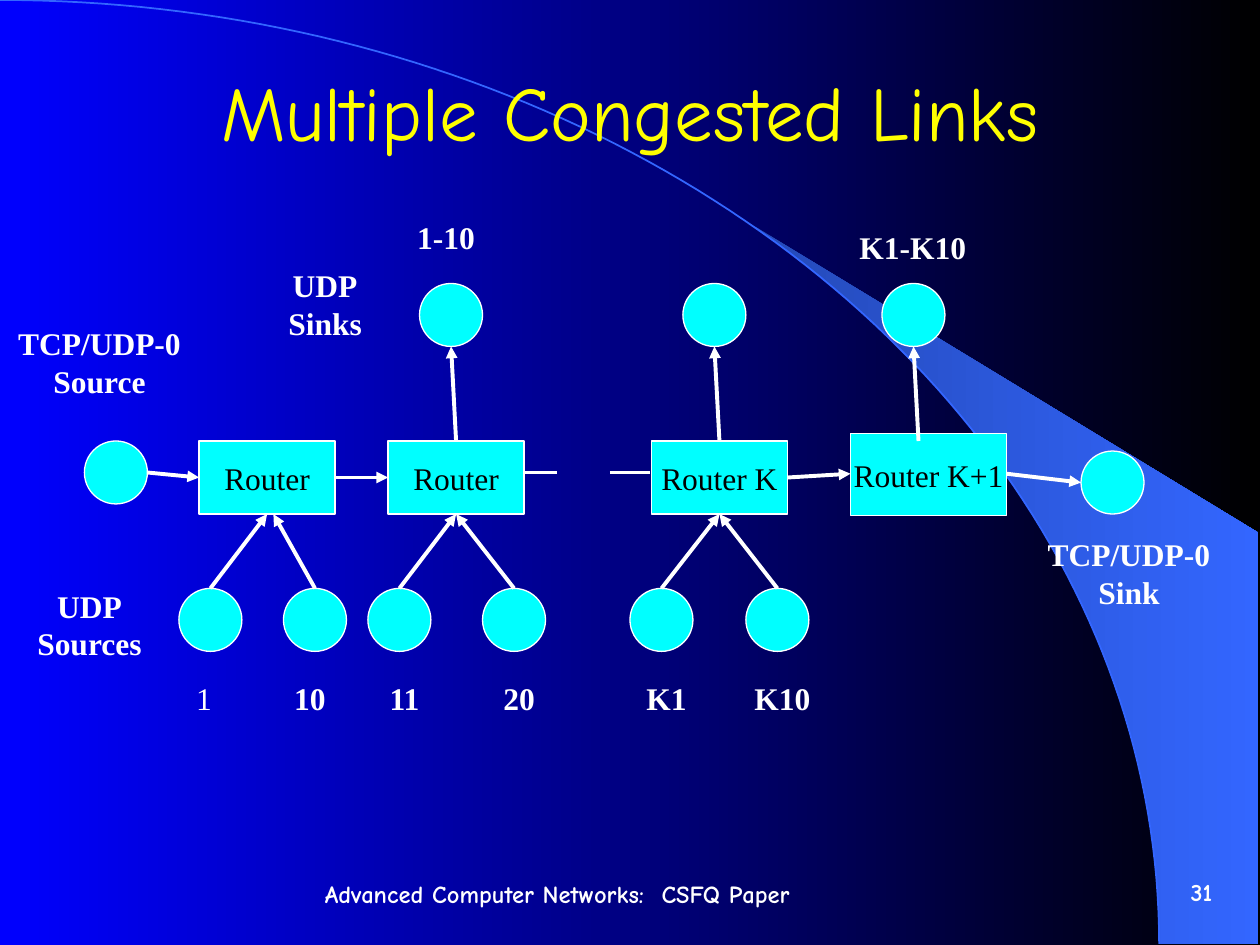
import math
import pptx
import pptx.util
import pptx.dml.color
import pptx.enum.shapes
import pptx.enum.text
import pptx.oxml
import pptx.oxml.ns

Inches = pptx.util.Inches
SHAPE = pptx.enum.shapes.MSO_SHAPE
ALIGN = pptx.enum.text.PP_ALIGN

# Content
TITLE = "Multiple Congested Links"
FOOTER = ("Advanced Computer Networks:  CSFQ Paper", (2.48, 6.9, 4.88, 0.39))
NUMBER = ("31", (8.23, 6.82, 1.49, 0.51))
ROUTERS = [  # name, box
    ("Router", (1.58, 3.5, 1.08, 0.58)),
    ("Router", (3.08, 3.5, 1.08, 0.58)),
    ("Router K", (5.17, 3.5, 1.08, 0.58)),
    ("Router K+1", (6.75, 3.44, 1.24, 0.65)),
]
SOURCES = [  # label, label left, bold, node left, x where its arrow ends
    ("1", 1.33, False, 1.42, 2.12), ("10", 2.17, True, 2.25, 2.17),
    ("11", 2.92, True, 2.92, 3.62), ("20", 3.83, True, 3.83, 3.62),
    ("K1", 5, True, 5, 5.71), ("K10", 5.92, True, 5.92, 5.71),
]
SINKS = [3.33, 5.42, 7]
ENDPOINTS = [(0.67, 3.5), (8.58, 3.58)]
LINKS = [  # from, to, arrowhead
    ((1.17, 3.75), (1.58, 3.79), True),
    ((2.67, 3.79), (3.08, 3.79), True),
    ((4.17, 3.75), (4.42, 3.75), False),
    ((4.84, 3.75), (5.16, 3.75), False),
    ((6.25, 3.79), (6.75, 3.76), True),
    ((7.99, 3.76), (8.58, 3.83), True),
]
CAPTIONS = [  # lines, box
    ("UDP\nSinks", (2.08, 2.08, 1, 0.67)),
    ("TCP/UDP-0\nSink", (8.42, 4.17, 1.08, 0.75)),
    ("TCP/UDP-0\nSource", (0.25, 2.5, 1.08, 0.75)),
    ("UDP\nSources", (0.17, 4.58, 1.08, 0.75)),
    ("1-10", (3.25, 1.67, 0.58, 0.42)),
    ("K1-K10", (6.83, 1.75, 0.83, 0.42)),
]
NODE = 0.5
SOURCE_TOP, SINK_TOP, LABEL_TOP = 4.67, 2.25, 5.33
ROUTER_TOP, ROUTER_BOTTOM = 3.5, 4.08
ARC_W, ARC_H = 9.2, 7.49

THEME = dict(
    title="FFFF00", text="FFFFFF", node="00FFFF", dark="000000",
    back=("0000FF", "000000"), wedge=("2449B6", "3366FF"), arc="3366FF",
    display="Comic Neue", body="Times New Roman",
    title_pt=44, body_pt=18, foot_pt=14, outline_pt=0.75, link_pt=2.25,
)


def rgb(name):
    return pptx.dml.color.RGBColor.from_string(THEME.get(name, name))


def set_gradient(fill, colors):
    fill.gradient()
    fill.gradient_angle = 0
    for stop, color, position in zip(fill.gradient_stops, colors, (0, 1)):
        stop.color.rgb = rgb(color)
        stop.position = position


def write(sp, text, font="body", size="body_pt", color="text", bold=False,
          align=ALIGN.CENTER, wrap=False):
    tf = sp.text_frame
    tf.word_wrap = wrap
    tf.vertical_anchor = pptx.enum.text.MSO_ANCHOR.MIDDLE
    for i, line in enumerate(text.split("\n")):
        p = tf.add_paragraph() if i else tf.paragraphs[0]
        p.alignment = align
        r = p.add_run()
        r.text = line
        r.font.name = THEME[font]
        r.font.size = pptx.util.Pt(THEME[size])
        r.font.bold = bold
        r.font.color.rgb = rgb(color)


def add_label(s, text, box, **fmt):
    """Text on a clear rectangle, whose lines may run past its sides."""
    sp = s.shapes.add_shape(SHAPE.RECTANGLE, *map(Inches, box))
    sp.shadow.inherit = False
    sp.fill.background()
    sp.line.fill.background()
    write(sp, text, **fmt)


def add_node(s, kind, box):
    sp = s.shapes.add_shape(kind, *map(Inches, box))
    sp.shadow.inherit = False
    sp.fill.solid()
    sp.fill.fore_color.rgb = rgb("node")
    sp.line.color.rgb = rgb("text")
    sp.line.width = pptx.util.Pt(THEME["outline_pt"])
    return sp


def add_circle(s, left, top):
    add_node(s, SHAPE.OVAL, (left, top, NODE, NODE))


def add_link(s, start, end, arrow=True):
    c = s.shapes.add_connector(pptx.enum.shapes.MSO_CONNECTOR.STRAIGHT,
                               *map(Inches, start + end))
    c.line.color.rgb = rgb("text")
    c.line.width = pptx.util.Pt(THEME["link_pt"])
    ns = pptx.oxml.ns.nsdecls("a")
    if arrow:
        c.line._get_or_add_ln().append(
            pptx.oxml.parse_xml(f'<a:tailEnd {ns} type="triangle"/>'))
    c.element.spPr.append(pptx.oxml.parse_xml(f"<a:effectLst {ns}/>"))


def arc_points(first_x, steps):
    """Points on the quarter ellipse from first_x to its right end."""
    first = math.asin(first_x / ARC_W)
    angles = [first + (math.pi / 2 - first) * i / steps for i in range(steps + 1)]
    return [(ARC_W * math.sin(a), ARC_H * (1 - math.cos(a))) for a in angles]


def add_outline(s, points, close):
    points = [(Inches(x), Inches(y)) for x, y in points]
    builder = s.shapes.build_freeform(*points[0])
    builder.add_line_segments(points[1:], close=close)
    sp = builder.convert_to_shape()
    sp.shadow.inherit = False
    return sp


def add_backdrop(s):
    set_gradient(s.background.fill, THEME["back"])
    wedge = add_outline(s, arc_points(5.89, 24) + [(9.99, 7.49), (9.99, 4.23)], True)
    set_gradient(wedge.fill, THEME["wedge"])
    wedge.line.fill.background()
    arc = add_outline(s, arc_points(0, 90), False)
    arc.fill.background()
    arc.line.color.rgb = rgb("arc")
    arc.line.width = pptx.util.Pt(1)


def main():
    prs = pptx.Presentation()
    prs.slide_width, prs.slide_height = Inches(10), Inches(7.5)
    s = prs.slides.add_slide(prs.slide_layouts[5])
    add_backdrop(s)

    # Title in front of the backdrop, then footer and slide number
    title = s.shapes.title
    title.element.getparent().append(title.element)
    title.left, title.top, title.width, title.height = map(Inches, (0.75, 0.25, 8.5, 1.25))
    write(title, TITLE, font="display", size="title_pt", color="title", wrap=True)
    for (text, box), align in ((FOOTER, ALIGN.LEFT), (NUMBER, ALIGN.RIGHT)):
        write(s.shapes.add_textbox(*map(Inches, box)), text, font="display",
              size="foot_pt", bold=True, align=align, wrap=True)

    # Routers and end points
    for name, box in ROUTERS:
        write(add_node(s, SHAPE.RECTANGLE, box), name, color="dark")
    for left, top in ENDPOINTS:
        add_circle(s, left, top)

    # Sources below and sinks above, each joined to its router
    for label, label_left, bold, left, target in SOURCES:
        add_circle(s, left, SOURCE_TOP)
        add_link(s, (left + NODE / 2, SOURCE_TOP), (target, ROUTER_BOTTOM))
        add_label(s, label, (label_left, LABEL_TOP, 0.58, 0.42), bold=bold)
    for left in SINKS:
        add_circle(s, left, SINK_TOP)
        x = left + NODE / 2
        add_link(s, (x + 0.04, ROUTER_TOP), (x, SINK_TOP + NODE))

    # Links along the chain, and captions
    for start, end, arrow in LINKS:
        add_link(s, start, end, arrow)
    for text, box in CAPTIONS:
        add_label(s, text, box, bold=True)
    prs.save("out.pptx")


if __name__ == "__main__":
    main()
